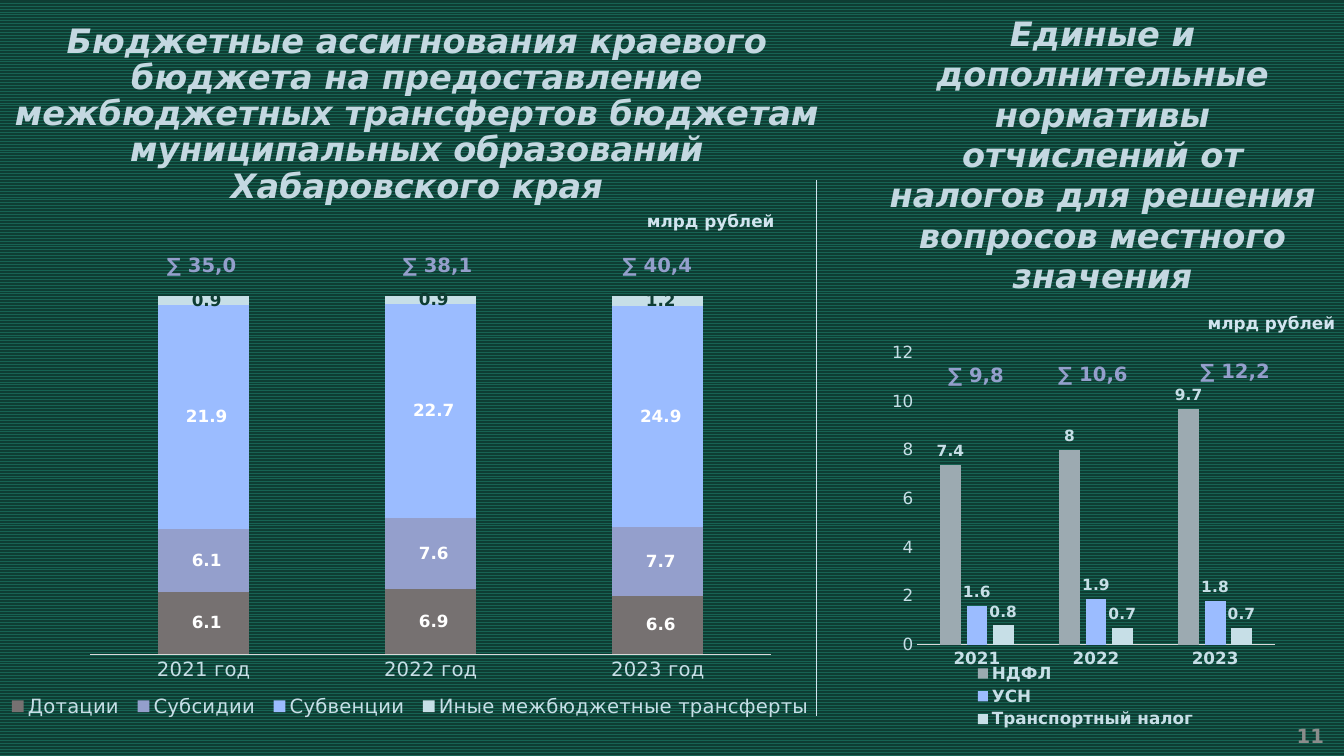
"""Build the slide on regional budget transfers and tax-share norms."""
from lxml import etree
from pptx import Presentation
from pptx.chart.data import CategoryChartData
from pptx.dml.color import RGBColor
from pptx.enum.chart import XL_CHART_TYPE, XL_LABEL_POSITION, XL_LEGEND_POSITION, XL_TICK_MARK
from pptx.enum.dml import MSO_PATTERN
from pptx.enum.shapes import MSO_CONNECTOR
from pptx.enum.text import MSO_ANCHOR, MSO_AUTO_SIZE, PP_ALIGN
from pptx.oxml.ns import qn
from pptx.util import Inches, Pt

FONT = "DejaVu Sans"
COLORS = {name: RGBColor.from_string(value) for name, value in {
    "stripe": "176353", "ground": "0E3D33", "title": "C4D8E1", "unit": "D1E5EF",
    "number": "8C8C8C", "violet": "949FCC", "blue": "9BBCFF", "mint": "C7DFE7",
    "gray": "767171", "silver": "9CAAB1", "axis": "D9D9D9", "white": "FFFFFF",
}.items()}


def add_text(box, text, size, color, align=PP_ALIGN.CENTER, italic=False, spacing=None):
    """Add a bold one-paragraph text box and return its text frame."""
    frame = slide.shapes.add_textbox(*map(Inches, box)).text_frame
    frame.word_wrap = True
    frame.auto_size = MSO_AUTO_SIZE.SHAPE_TO_FIT_TEXT
    paragraph = frame.paragraphs[0]
    paragraph.alignment = align
    if spacing:
        paragraph.line_spacing = spacing
    run = paragraph.add_run()
    run.text = text
    run.font.name, run.font.size = FONT, Pt(size)
    run.font.bold, run.font.italic = True, italic
    run.font.color.rgb = COLORS[color]
    return frame


def style_font(font, size, color, bold=False):
    """Set the face, size, weight and colour of chart text."""
    font.name, font.size, font.bold = FONT, Pt(size), bold
    font.color.rgb = COLORS[color]


presentation = Presentation()
presentation.slide_width, presentation.slide_height = Inches(13.33), Inches(7.5)
slide = presentation.slides.add_slide(presentation.slide_layouts[6])
background = slide.background.fill
background.patterned()
background.pattern = MSO_PATTERN.ZIG_ZAG
background.fore_color.rgb = COLORS["stripe"]
background.back_color.rgb = COLORS["ground"]

add_text((0, 0.19, 8.27, 1.92),
         "Бюджетные ассигнования краевого бюджета на предоставление межбюджетных "
         "трансфертов бюджетам муниципальных образований Хабаровского края",
         24, "title", italic=True, spacing=0.9)
number_frame = add_text((10.23, 7.1, 3, 0.4), "11", 14, "number", PP_ALIGN.RIGHT)
number_frame.auto_size = MSO_AUTO_SIZE.NONE
number_frame.vertical_anchor = MSO_ANCHOR.MIDDLE

divider = slide.shapes.add_connector(
    MSO_CONNECTOR.STRAIGHT, Inches(8.1), Inches(1.79), Inches(8.1), Inches(7.1))
divider.line.color.rgb = COLORS["unit"]
divider.line.width = Pt(0.5)
etree.SubElement(divider._element.spPr, qn("a:effectLst"))

add_text((8.64, 0.08, 4.59, 2.93),
         "Единые и дополнительные нормативы отчислений от налогов для решения "
         "вопросов местного значения", 24, "title", italic=True)

charts = [
    {
        "type": XL_CHART_TYPE.COLUMN_STACKED_100, "box": (0, 2.8, 8.14, 4.5),
        "categories": ["2021 год", "2022 год", "2023 год"],
        "series": [
            ("Дотации", (6.1, 6.9, 6.6), "gray", "white"),
            ("Субсидии", (6.1, 7.6, 7.7), "violet", "white"),
            ("Субвенции", (21.9, 22.7, 24.9), "blue", "white"),
            ("Иные межбюджетные трансферты", (0.9, 0.9, 1.2), "mint", "ground"),
        ],
        "gap": 150, "overlap": 100, "size": 14, "bold": False, "label_size": 12,
        "label_position": XL_LABEL_POSITION.CENTER, "format": "#\\ ##0.0",
        "value_axis": False,
        "plot": (0.11, 0.03, 0.83, 0.79), "legend": (0, 0.9, 1, 0.07),
    },
    {
        "type": XL_CHART_TYPE.COLUMN_CLUSTERED, "box": (8.64, 3.38, 4.17, 3.92),
        "categories": ["2021", "2022", "2023"],
        "series": [
            ("НДФЛ", (7.4, 8, 9.7), "silver", "mint"),
            ("УСН", (1.6, 1.9, 1.8), "blue", "mint"),
            ("Транспортный налог", (0.8, 0.7, 0.7), "mint", "mint"),
        ],
        "gap": 219, "overlap": -27, "size": 12, "bold": True, "label_size": 11,
        "label_position": XL_LABEL_POSITION.OUTSIDE_END, "format": "General",
        "value_axis": True,
        "plot": (0.11, 0.03, 0.85, 0.74), "legend": (0.23, 0.81, 0.56, 0.18),
    },
]

for design in charts:
    data = CategoryChartData(number_format=design["format"])
    data.categories = design["categories"]
    for name, values, _, _ in design["series"]:
        data.add_series(name, values)
    chart = slide.shapes.add_chart(design["type"], *map(Inches, design["box"]), data).chart
    chart.has_title = False
    style_font(chart.font, design["size"], "mint")

    category_axis = chart.category_axis
    category_axis.major_tick_mark = XL_TICK_MARK.NONE
    category_axis.format.line.color.rgb = COLORS["axis"]
    category_axis.format.line.width = Pt(0.75)
    style_font(category_axis.tick_labels.font, design["size"], "mint", design["bold"])

    value_axis = chart.value_axis
    value_axis.has_major_gridlines = False
    value_axis.visible = design["value_axis"]
    value_axis.major_tick_mark = XL_TICK_MARK.NONE
    value_axis.format.line.fill.background()
    style_font(value_axis.tick_labels.font, design["size"], "mint")

    plot = chart.plots[0]
    plot.vary_by_categories = False
    plot.gap_width, plot.overlap = design["gap"], design["overlap"]
    for series, (_, _, color, label_color) in zip(plot.series, design["series"]):
        series.format.fill.solid()
        series.format.fill.fore_color.rgb = COLORS[color]
        labels = series.data_labels
        labels.show_value = True
        labels.number_format, labels.number_format_is_linked = design["format"], False
        labels.position = design["label_position"]
        style_font(labels.font, design["label_size"], label_color, True)

    chart.has_legend = True
    chart.legend.position = XL_LEGEND_POSITION.BOTTOM
    chart.legend.include_in_layout = False
    style_font(chart.legend.font, design["size"], "mint", design["bold"])

    plot_area = chart._chartSpace.chart.plotArea
    for parent, index, area in ((plot_area, 0, "plot"), (chart.legend._element, 1, "legend")):
        for previous in parent.findall(qn("c:layout")):
            parent.remove(previous)
        layout = etree.Element(qn("c:layout"))
        parent.insert(index, layout)
        manual = etree.SubElement(layout, qn("c:manualLayout"))
        settings = [("xMode", "edge"), ("yMode", "edge"), *zip("xywh", design[area])]
        if area == "plot":
            settings.insert(0, ("layoutTarget", "inner"))
        for tag, value in settings:
            etree.SubElement(manual, qn(f"c:{tag}")).set("val", str(value))

for left, top in ((5.96, 2.04), (11.52, 3.05)):
    add_text((left, top, 2.18, 0.3), "млрд рублей", 12, "unit")

totals = [
    ("35,0", 0.91, 2.46), ("38,1", 3.25, 2.46), ("40,4", 5.43, 2.46),
    ("9,8", 8.59, 3.55), ("10,6", 9.75, 3.54), ("12,2", 11.16, 3.51),
]
for total, left, top in totals:
    add_text((left, top, 2.18, 0.34), f"∑ {total}", 14, "violet")

presentation.save("out.pptx")
